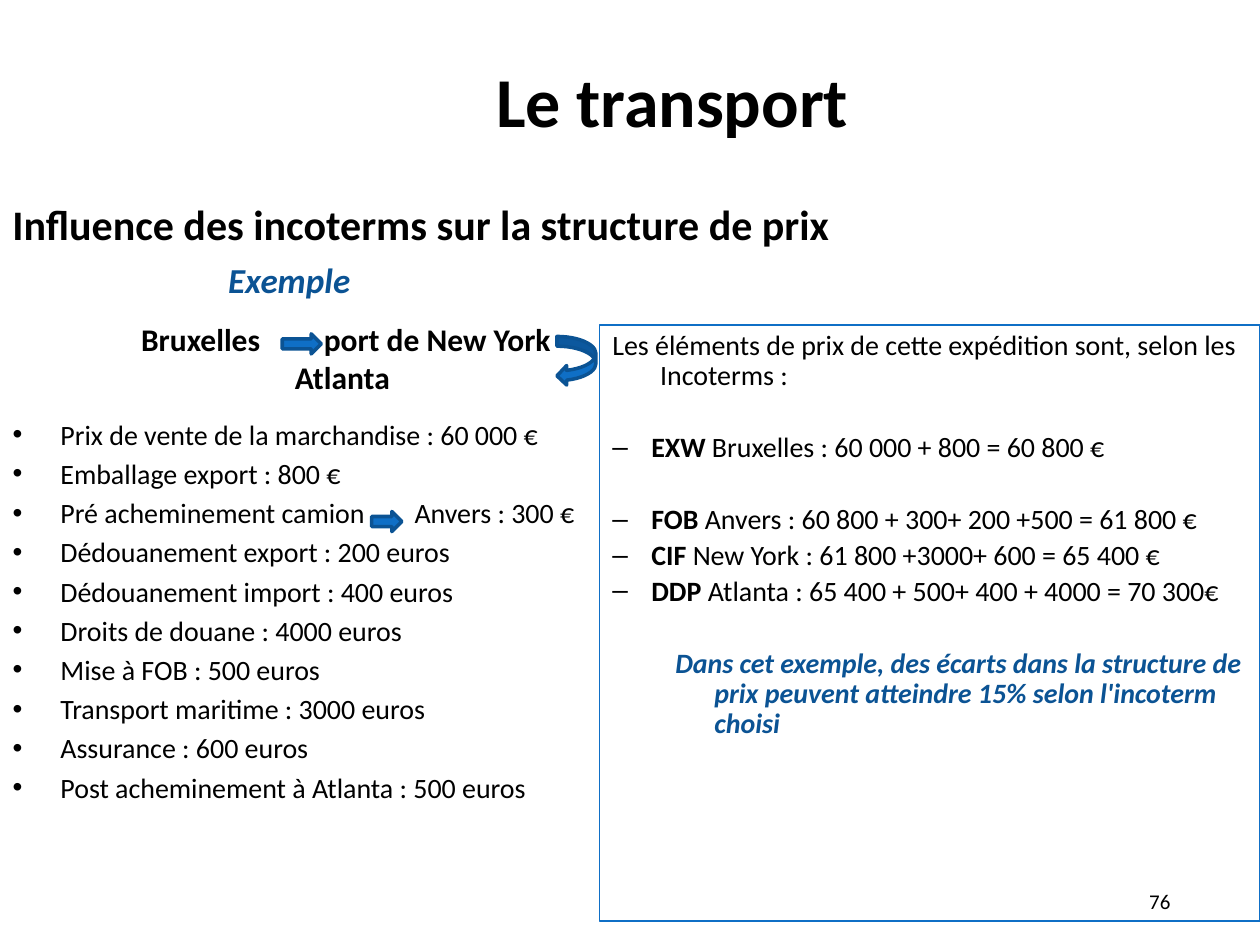
"""Build the slide on how incoterms change the price structure of a shipment."""
from lxml.etree import SubElement
from pptx import Presentation
from pptx.dml.color import RGBColor
from pptx.enum.shapes import MSO_SHAPE as SHAPE
from pptx.enum.text import MSO_ANCHOR as ANCHOR, MSO_AUTO_SIZE as AUTO, PP_ALIGN as ALIGN
from pptx.oxml.ns import qn
from pptx.util import Inches, Pt

BLACK = RGBColor(0x00, 0x00, 0x00)
BLUE = RGBColor(0x0F, 0x6F, 0xC6)
NAVY = RGBColor(0x0B, 0x53, 0x94)

prs = Presentation()
prs.slide_width, prs.slide_height = Inches(10), Inches(7.5)
s = prs.slides.add_slide(prs.slide_layouts[3])


def place(sp, x, y, w, h, anchor=ANCHOR.TOP):
    """Set a shape's box in percent of the slide."""
    sp.left, sp.width = (int(prs.slide_width * v / 100) for v in (x, w))
    sp.top, sp.height = (int(prs.slide_height * v / 100) for v in (y, h))
    tf = sp.text_frame
    tf.word_wrap, tf.auto_size, tf.vertical_anchor = True, AUTO.NONE, anchor
    return tf


def write(tf, runs, size, color=BLACK, italic=False, align=ALIGN.LEFT, before=0,
          spacing=1, margin=0, hang=0, bullet=None, tab=None):
    """Add a paragraph made of (text, bold) runs."""
    p = tf.paragraphs[0] if not tf.text else tf.add_paragraph()
    p.alignment, p.line_spacing, p.space_before = align, spacing, Pt(before)
    pPr = p._p.get_or_add_pPr()
    pPr.set("marL", str(Inches(margin)))
    pPr.set("indent", str(-Inches(hang)))
    if bullet:
        SubElement(pPr, qn("a:buFont"), typeface="Arial")
        SubElement(pPr, qn("a:buChar"), char=bullet)
    else:
        SubElement(pPr, qn("a:buNone"))
    if tab:
        tabs = SubElement(pPr, qn("a:tabLst"))
        SubElement(tabs, qn("a:tab"), pos=str(Inches(tab)), algn="l")
    for text, bold in runs:
        r = p.add_run()
        r.text = text
        r.font.name, r.font.size = "Calibri", Pt(size)
        r.font.bold, r.font.italic = bold, italic
        r.font.color.rgb = color


title, costs, prices = s.placeholders

tf = place(title, 11.7, 3.33, 83.3, 14.4, ANCHOR.MIDDLE)
write(tf, [("Le transport", True)], 40, align=ALIGN.CENTER)

tf = place(s.shapes.add_textbox(0, 0, 0, 0), 0, 15.33, 100, 16.67, ANCHOR.MIDDLE)
write(tf, [("Influence des incoterms sur la structure de prix", True)], 24)

tf = place(s.shapes.add_textbox(0, 0, 0, 0), 2.5, 26.67, 40.9, 5.87)
write(tf, [("Exemple", True)], 20, NAVY, italic=True, align=ALIGN.CENTER)

tf = place(s.shapes.add_textbox(0, 0, 0, 0), 11.2, 33.87, 36.4, 8.2)
tf.margin_left = tf.margin_right = tf.margin_top = tf.margin_bottom = 0
write(tf, [("Bruxelles\tport de New York", True)], 18, margin=1.45, hang=1.45, tab=1.45)
write(tf, [("Atlanta", True)], 18, margin=1.22)

tf = place(costs, 0, 43.5, 53.1, 43)
for i, item in enumerate([
    "Prix de vente de la marchandise : 60 000 €",
    "Emballage export : 800 €",
    "Pré acheminement camion\tAnvers : 300 €",
    "Dédouanement export : 200 euros",
    "Dédouanement import : 400 euros",
    "Droits de douane : 4000 euros",
    "Mise à FOB : 500 euros",
    "Transport maritime : 3000 euros",
    "Assurance : 600 euros",
    "Post acheminement à Atlanta : 500 euros",
]):
    write(tf, [(item, False)], 16, before=3.2 if i else 0, margin=0.38, hang=0.38,
          bullet="•", tab=3.19 if "\t" in item else None)

tf = place(prices, 47.6, 34.4, 52.4, 63.07)
prices.line.color.rgb, prices.line.width = BLUE, Pt(0.75)
write(tf, [("Les éléments de prix de cette expédition sont, selon les Incoterms :", False)],
      16, spacing=0.9, margin=0.38, hang=0.38)
for term, total, before in [
    ("EXW", " Bruxelles : 60 000 + 800 = 60 800 €", 23.8),
    ("FOB ", "Anvers : 60 800 + 300+ 200 +500 = 61 800 €", 23.8),
    ("CIF ", "New York : 61 800 +3000+ 600 = 65 400 €", 3.2),
    ("DDP", " Atlanta : 65 400 + 500+ 400 + 4000 = 70 300€", 3.2),
]:
    write(tf, [(term, True), (total, False)], 16, before=before, spacing=0.9,
          margin=0.31, hang=0.31, bullet="–")
write(tf, [("Dans cet exemple, des écarts dans la structure de prix peuvent atteindre 15% "
            "selon l'incoterm choisi", True)],
      16, NAVY, italic=True, before=23.8, spacing=0.9, margin=0.81, hang=0.31)

for kind, *box in [
    (SHAPE.RIGHT_ARROW, 22.4, 35.33, 3.1, 2.13),
    (SHAPE.CURVED_LEFT_ARROW, 44.2, 35.6, 3.1, 5.2),
    (SHAPE.RIGHT_ARROW, 29.5, 54.13, 2.4, 2.13),
]:
    sp = s.shapes.add_shape(kind, 0, 0, 0, 0)
    place(sp, *box)
    sp.shadow.inherit = False
    sp.fill.solid()
    sp.fill.fore_color.rgb = BLUE
    sp.line.color.rgb, sp.line.width = NAVY, Pt(2)

tf = place(s.shapes.add_textbox(0, 0, 0, 0), 88.3, 92.67, 7.5, 5.33, ANCHOR.MIDDLE)
write(tf, [("76", False)], 12, align=ALIGN.CENTER)

prs.save("out.pptx")
